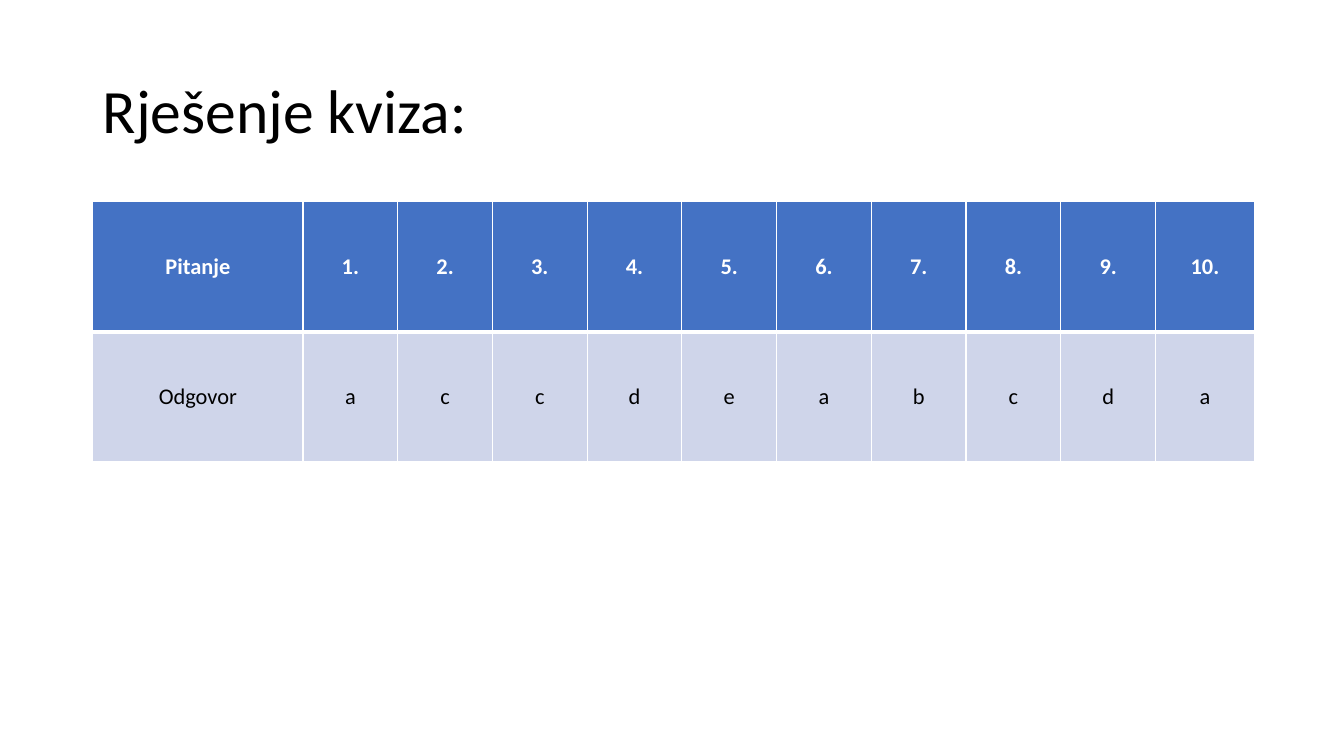
"""Build the quiz answer slide: a title above a two-row table."""
import dataclasses

import lxml.etree
import pptx
import pptx.dml.color
import pptx.enum.text
import pptx.oxml.ns
import pptx.util

Pt = pptx.util.Pt
RGB = pptx.dml.color.RGBColor.from_string
ALIGN = pptx.enum.text.PP_ALIGN
MIDDLE = pptx.enum.text.MSO_ANCHOR.MIDDLE


@dataclasses.dataclass(frozen=True)
class Theme:
    font: str = "Calibri"
    ink: str = "000000"
    white: str = "FFFFFF"
    head: str = "4472C4"
    band: str = "CFD5EA"
    title: int = 44
    body: int = 16


THEME = Theme()
LEFT, WIDTH = 66.24, 828
FIRST, STEP, LAST = 150.2, 67.68, 70.6
HEIGHT = 93
ANSWERS = "accdeabcda"


def write(frame, text, size=THEME.body, color=THEME.ink, bold=False,
          align=ALIGN.LEFT, space=1.0):
    para = frame.paragraphs[0]
    para.alignment = align
    para.line_spacing = space
    run = para.add_run()
    run.text = text
    font = run.font
    font.name, font.size, font.bold = THEME.font, Pt(size), bold
    font.color.rgb = RGB(color)


def title(slide, text):
    box = slide.shapes.add_textbox(Pt(LEFT), Pt(28.75), Pt(WIDTH), Pt(104.4))
    frame = box.text_frame
    frame.word_wrap = True
    frame.vertical_anchor = MIDDLE
    write(frame, text, size=THEME.title, space=0.9)


def border(cell, widths):
    props = cell._tc.get_or_add_tcPr()
    name = pptx.oxml.ns.qn
    for index, (side, width) in enumerate(widths.items()):
        line = lxml.etree.Element(name(f"a:ln{side}"), w=str(Pt(width)))
        fill = lxml.etree.SubElement(line, name("a:solidFill"))
        lxml.etree.SubElement(fill, name("a:srgbClr"), val=THEME.white)
        props.insert(index, line)


def fill_cell(cell, text, head):
    cell.fill.solid()
    cell.fill.fore_color.rgb = RGB(THEME.head if head else THEME.band)
    cell.vertical_anchor = MIDDLE
    cell.margin_left = cell.margin_right = Pt(5.4)
    cell.margin_top = cell.margin_bottom = 0
    write(cell.text_frame, text, color=THEME.white if head else THEME.ink,
          bold=head, align=ALIGN.CENTER)
    border(cell, {"L": 1, "R": 1, "T": 1 if head else 3, "B": 3 if head else 1})


def grid(slide, rows):
    count = len(rows[0])
    table = slide.shapes.add_table(len(rows), count, Pt(LEFT), Pt(144),
                                   Pt(WIDTH), Pt(HEIGHT * len(rows))).table
    widths = [FIRST] + [STEP] * (count - 2) + [LAST]
    for column, width in zip(table.columns, widths):
        column.width = Pt(width)
    for y, row in enumerate(rows):
        table.rows[y].height = Pt(HEIGHT)
        for x, text in enumerate(row):
            fill_cell(table.cell(y, x), text, head=y == 0)


def main():
    deck = pptx.Presentation()
    deck.slide_width, deck.slide_height = Pt(960), Pt(540)
    slide = deck.slides.add_slide(deck.slide_layouts[6])
    title(slide, "Rješenje kviza:")
    marks = [f"{n}." for n in range(1, len(ANSWERS) + 1)]
    grid(slide, [["Pitanje", *marks], ["Odgovor", *ANSWERS]])
    deck.save("out.pptx")


if __name__ == "__main__":
    main()
